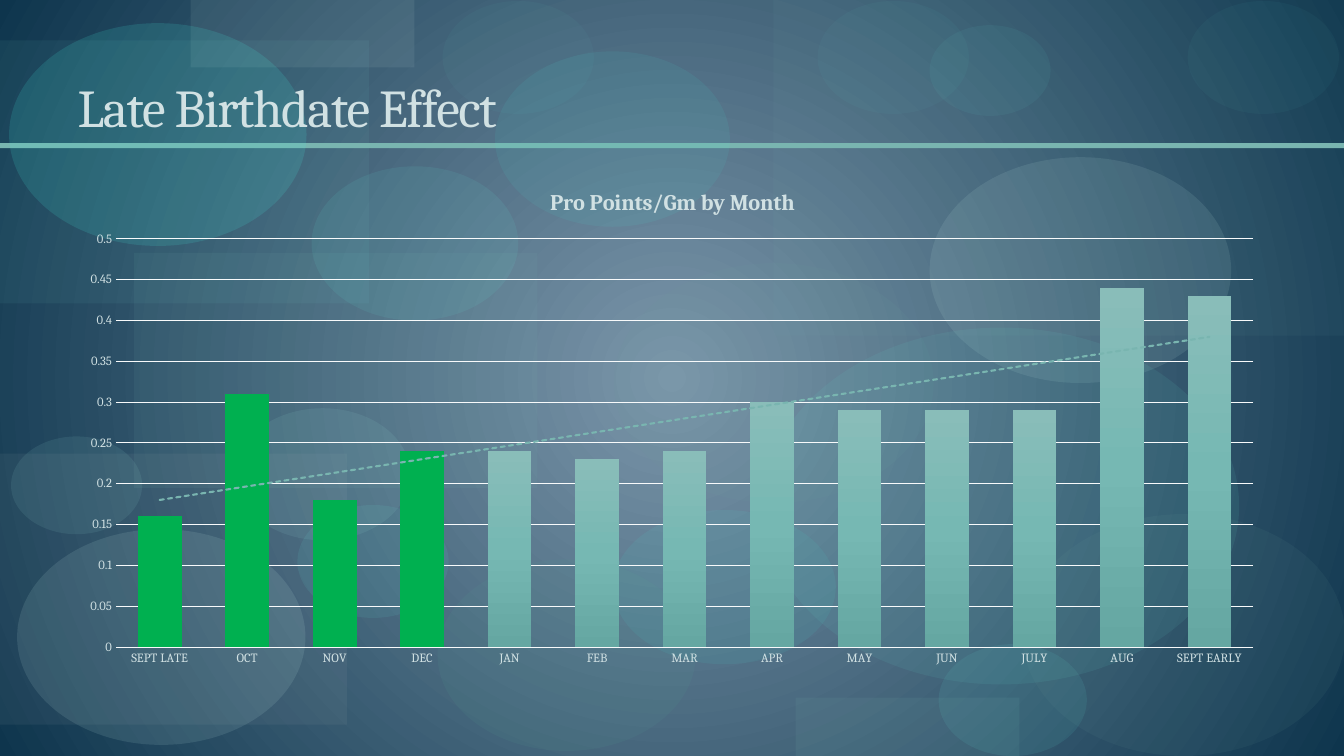
from dataclasses import dataclass
from pptx import Presentation
from pptx.chart.data import CategoryChartData as ChartData
from pptx.dml.color import RGBColor as RGB
from pptx.enum.chart import XL_CHART_TYPE as Chart, XL_TICK_MARK as Tick
from pptx.enum.shapes import MSO_SHAPE as Shape
from pptx.enum.text import MSO_ANCHOR as Anchor, PP_ALIGN as Align
from pptx.oxml import parse_xml
from pptx.oxml.ns import nsdecls, qn
from pptx.util import Inches, Pt


@dataclass(frozen=True)
class Theme:
    font: str = "Cambria"
    text: str = "D1E1E3"
    grid: str = "F8FAFB"
    teal: str = "79B5B0"
    late: str = "00B050"
    back: tuple = ("7B96AA", "0E354D")
    bars: tuple = ("89BDB9", "76B8B3", "65A7A2")
    head: int = 38
    name: int = 16
    tick: int = 9


THEME = Theme()

RECTS = [
    (1.33, 2.51, 4, 2.33, "79B5B0", 9),
    (7.67, 0, 5.67, 3.33, "79B5B0", 6),
    (0, 4.5, 3.44, 2.69, "B2B7BA", 8),
    (0, 0.4, 3.66, 2.61, "77D6CE", 7),
    (1.89, 0, 2.22, 0.67, "BED7D4", 10),
    (7.89, 6.92, 2.22, 0.58, "79B5B0", 10),
    (0, 1.42, 13.33, 0.05, THEME.teal, 100),
]
OVALS = [
    (4.34, 5.55, 2.56, 1.9, "549791", 13),
    (6.09, 2.61, 3.17, 2.38, "70A39E", 8),
    (9.31, 6.39, 1.47, 1.11, "65E8DC", 9),
    (9.22, 1.56, 2.99, 2.24, "C1E8E4", 11),
    (0.17, 5.25, 2.86, 2.14, "C1E8E4", 12),
    (2.95, 5.01, 1.5, 1.12, "65E8DC", 9),
    (6.08, 5.06, 2.21, 1.53, "44EADC", 8),
    (0.09, 0.23, 2.95, 2.21, "44EADC", 15),
    (0.11, 4.33, 1.3, 0.97, "97DCD6", 10),
    (3.09, 1.65, 2.05, 1.53, "65E8DC", 9),
    (4.91, 0.51, 2.33, 1.74, "44EADC", 8),
    (7.57, 3.25, 4.72, 3.54, "61CDC4", 10),
    (8.11, 0.01, 1.5, 1.12, "65E8DC", 4),
    (10.14, 5.1, 3.2, 2.4, "70A39E", 8),
    (2.33, 4.05, 1.74, 1.31, "97DCD6", 10),
    (9.22, 0.25, 1.2, 0.9, "65E8DC", 6),
    (11.78, 0.01, 1.5, 1.12, "65E8DC", 4),
    (4.39, 0.01, 1.5, 1.12, "65E8DC", 4),
]
POINTS = {
    "SEPT LATE": 0.16, "OCT": 0.31, "NOV": 0.18, "DEC": 0.24, "JAN": 0.24,
    "FEB": 0.23, "MAR": 0.24, "APR": 0.3, "MAY": 0.29, "JUN": 0.29,
    "JULY": 0.29, "AUG": 0.44, "SEPT EARLY": 0.43,
}
LATE = 4


def put(item, values):
    for key, value in values.items():
        setattr(item, key, value)


def node(tag, body="", attrs=""):
    return parse_xml(f'<{tag} {nsdecls("a", "c")} {attrs}>{body}</{tag}>')


def style(font, size, bold=False):
    put(font, {"name": THEME.font, "size": Pt(size), "bold": bold})
    font.color.rgb = RGB.from_string(THEME.text)


def paint(fill, color):
    fill.solid()
    fill.fore_color.rgb = RGB.from_string(color)


def rule(line, color):
    paint(line.fill, color)
    line.width = Pt(0.75)


def blend(root, colors, shade):
    grad = root.find(".//" + qn("a:gradFill"))
    for child in list(grad):
        grad.remove(child)
    step = 100000 // (len(colors) - 1)
    stops = "".join(
        f'<a:gs pos="{i * step}"><a:srgbClr val="{color}"/></a:gs>'
        for i, color in enumerate(colors)
    )
    grad.append(node("a:gsLst", stops))
    grad.append(shade)


def add_back(slide):
    slide.background.fill.gradient()
    rect = '<a:fillToRect l="50000" t="50000" r="50000" b="50000"/>'
    blend(slide.element, THEME.back, node("a:path", rect, 'path="circle"'))


def add_tint(slide, kind, box, color, alpha):
    shape = slide.shapes.add_shape(kind, *map(Inches, box))
    shape.shadow.inherit = False
    shape.line.fill.background()
    paint(shape.fill, color)
    if alpha < 100:
        tone = shape.element.find(".//" + qn("a:srgbClr"))
        tone.append(node("a:alpha", attrs=f'val="{alpha * 1000}"'))


def add_title(slide, text):
    title = slide.shapes.title
    slide.shapes.element.append(title.element)
    put(title, {"left": Inches(0.67), "top": Inches(0.17),
                "width": Inches(12), "height": Inches(1.25)})
    frame = title.text_frame
    put(frame, {"text": text, "word_wrap": True,
                "vertical_anchor": Anchor.BOTTOM})
    para = frame.paragraphs[0]
    para.alignment = Align.LEFT
    run = para.runs[0]
    style(run.font, THEME.head)
    run.font.element.set("spc", "-100") if hasattr(run.font, "element") else \
        title.element.find(".//" + qn("a:rPr")).set("spc", "-100")


def set_axes(chart):
    cat, val = chart.category_axis, chart.value_axis
    for axis in (cat, val):
        put(axis, {"major_tick_mark": Tick.NONE, "minor_tick_mark": Tick.NONE})
        style(axis.tick_labels.font, THEME.tick)
    put(val, {"minimum_scale": 0, "maximum_scale": 0.5, "major_unit": 0.05,
              "has_major_gridlines": True})
    put(val.tick_labels, {"number_format": "General",
                          "number_format_is_linked": False})
    rule(cat.format.line, THEME.grid)
    rule(val.major_gridlines.format.line, THEME.grid)
    val.format.line.fill.background()


def add_trend(root):
    line = (
        '<c:spPr><a:ln w="19050" cap="rnd"><a:solidFill>'
        f'<a:srgbClr val="{THEME.teal}"/></a:solidFill>'
        '<a:prstDash val="sysDash"/></a:ln></c:spPr>'
        '<c:trendlineType val="linear"/>'
        '<c:dispRSqr val="0"/><c:dispEq val="0"/>'
    )
    root.find(".//" + qn("c:cat")).addprevious(node("c:trendline", line))


def set_plot(root, box):
    area = root.find(".//" + qn("c:plotArea"))
    for old in area.findall(qn("c:layout")):
        area.remove(old)
    keys = "".join(f'<c:{key}Mode val="edge"/>' for key in "xy")
    sizes = "".join(f'<c:{key} val="{size}"/>' for key, size in zip("xywh", box))
    body = ('<c:manualLayout><c:layoutTarget val="inner"/>'
            f'{keys}{sizes}</c:manualLayout>')
    area.insert(0, node("c:layout", body))


def add_chart(slide, text):
    data = ChartData()
    data.categories = list(POINTS)
    data.add_series("Series 1", list(POINTS.values()))
    box = map(Inches, (0.67, 1.67, 12, 5))
    chart = slide.shapes.add_chart(Chart.COLUMN_CLUSTERED, *box, data).chart
    put(chart, {"has_legend": False, "has_title": True})
    style(chart.font, THEME.tick)
    frame = chart.chart_title.text_frame
    frame.text = text
    style(frame.paragraphs[0].runs[0].font, THEME.name, True)
    set_axes(chart)
    plot = chart.plots[0]
    put(plot, {"gap_width": 100, "overlap": -24, "vary_by_categories": False})
    bars = plot.series[0]
    bars.format.fill.gradient()
    blend(chart.element, THEME.bars, node("a:lin", attrs='ang="5400000" scaled="0"'))
    for i in range(LATE):
        paint(bars.points[i].format.fill, THEME.late)
    add_trend(chart.element)
    set_plot(chart.element, (0.04, 0.14, 0.94, 0.81))


def main():
    deck = Presentation()
    put(deck, {"slide_width": Inches(13.33), "slide_height": Inches(7.5)})
    slide = deck.slides.add_slide(deck.slide_layouts[5])
    add_back(slide)
    for kind, tints in ((Shape.RECTANGLE, RECTS), (Shape.OVAL, OVALS)):
        for *box, color, alpha in tints:
            add_tint(slide, kind, box, color, alpha)
    add_title(slide, "Late Birthdate Effect")
    add_chart(slide, "Pro Points/Gm by Month")
    deck.save("out.pptx")


if __name__ == "__main__":
    main()
